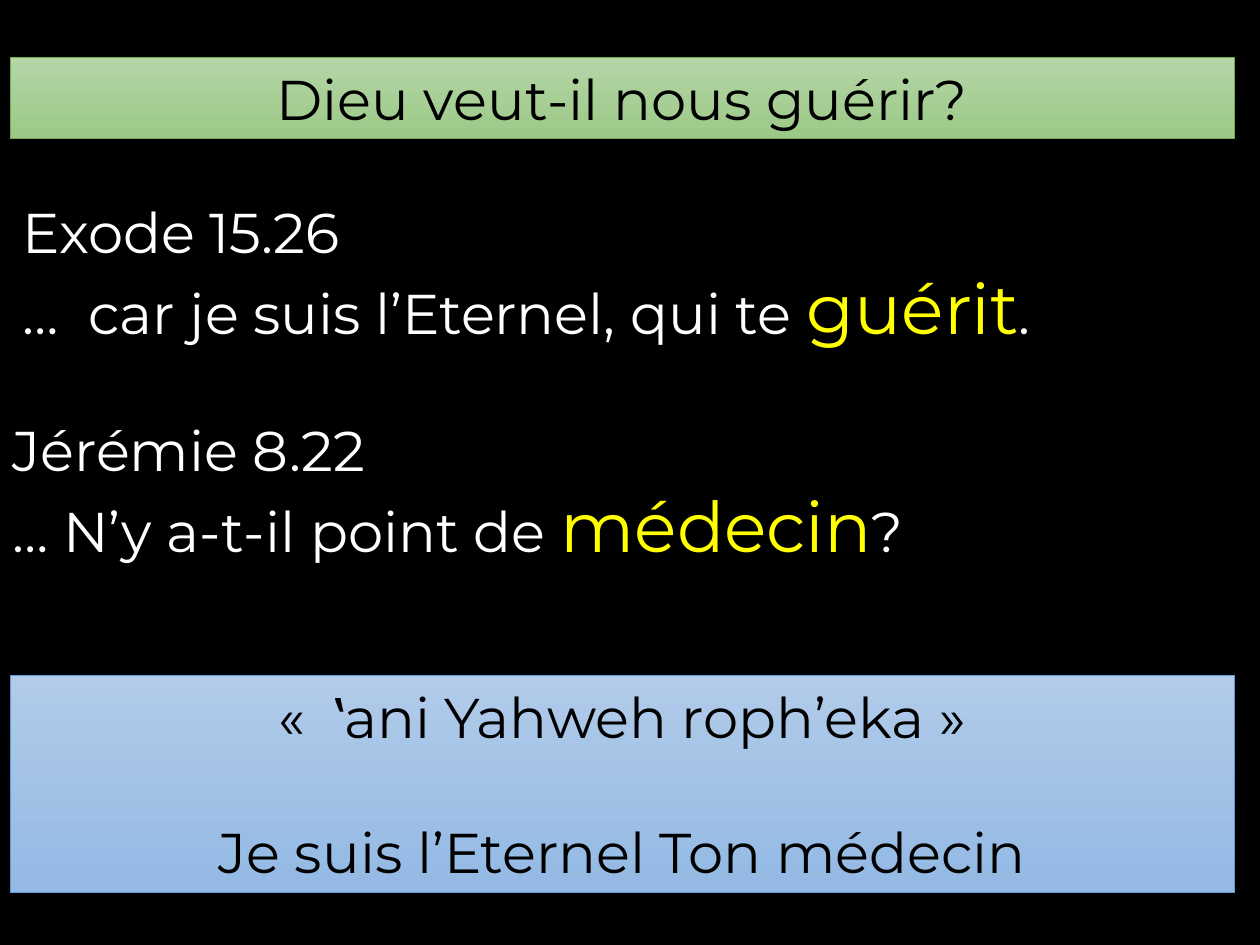
"""Build the slide on God as healer: two verses between two banners."""
import pptx
import pptx.util
import pptx.dml.color
import pptx.enum.shapes
import pptx.enum.text

WIDE, HIGH = 10, 7.5
LEFT, SPAN = 0.08, 9.72
FONT, SIZE, LARGE = "Montserrat", 32, 40
BLACK, WHITE, YELLOW = "000000", "FFFFFF", "FFFF00"
LINE = 39

BANNERS = [
    {"top": 0.46, "high": 0.64, "fill": ("B5D5A7", "9CC987"), "edge": "70AD47",
     "lines": ["Dieu veut-il nous guérir?"]},
    {"top": 5.36, "high": 1.72, "fill": ("B1CBE9", "93B9E4"), "edge": "5B9BD5",
     "lines": ["«  ‛ani Yahweh roph’eka »", "Je suis l’Eternel Ton médecin"]},
]
VERSES = [
    {"left": LEFT, "top": 1.52, "head": "Exode 15.26",
     "parts": ("…  car je suis l’Eternel, qui te ", "guérit", ".")},
    {"left": 0, "top": 3.25, "head": "Jérémie 8.22",
     "parts": ("… N’y a-t-il point de ", "médecin", "?")},
]


def tint(code):
    return pptx.dml.color.RGBColor.from_string(code)


def place(left, top, high):
    return [pptx.util.Inches(n) for n in (left, top, SPAN, high)]


def write(shape, rows, align, gap=0):
    """Fill a shape with rows of (text, size, colour) runs."""
    frame = shape.text_frame
    form = {"word_wrap": True,
            "auto_size": pptx.enum.text.MSO_AUTO_SIZE.SHAPE_TO_FIT_TEXT}
    for key, val in form.items():
        setattr(frame, key, val)
    for i, row in enumerate(rows):
        para = frame.add_paragraph() if i else frame.paragraphs[0]
        para.alignment = align
        para.space_before = pptx.util.Pt(gap if i else 0)
        for text, size, code in row:
            run = para.add_run()
            run.text = text
            for key, val in {"name": FONT, "size": pptx.util.Pt(size)}.items():
                setattr(run.font, key, val)
            run.font.color.rgb = tint(code)


def banner(slide, item):
    shape = slide.shapes.add_shape(
        pptx.enum.shapes.MSO_SHAPE.RECTANGLE,
        *place(LEFT, item["top"], item["high"]))
    shape.shadow.inherit = False
    shape.fill.gradient()
    shape.fill.gradient_angle = 270
    for stop, code in zip(shape.fill.gradient_stops, item["fill"]):
        stop.color.rgb = tint(code)
    shape.line.color.rgb = tint(item["edge"])
    shape.line.width = pptx.util.Pt(0.5)
    rows = [[(text, SIZE, BLACK)] for text in item["lines"]]
    write(shape, rows, pptx.enum.text.PP_ALIGN.CENTER, LINE)


def verse(slide, item):
    box = slide.shapes.add_textbox(*place(item["left"], item["top"], 1.31))
    start, key, end = item["parts"]
    rows = [[(item["head"], SIZE, WHITE)],
            [(start, SIZE, WHITE), (key, LARGE, YELLOW), (end, SIZE, WHITE)]]
    write(box, rows, pptx.enum.text.PP_ALIGN.JUSTIFY)


def main():
    deck = pptx.Presentation()
    deck.slide_width = pptx.util.Inches(WIDE)
    deck.slide_height = pptx.util.Inches(HIGH)
    slide = deck.slides.add_slide(deck.slide_layouts[6])
    slide.background.fill.solid()
    slide.background.fill.fore_color.rgb = tint(BLACK)
    for band, text in zip(BANNERS, VERSES):
        banner(slide, band)
        verse(slide, text)
    deck.save("out.pptx")


if __name__ == "__main__":
    main()
